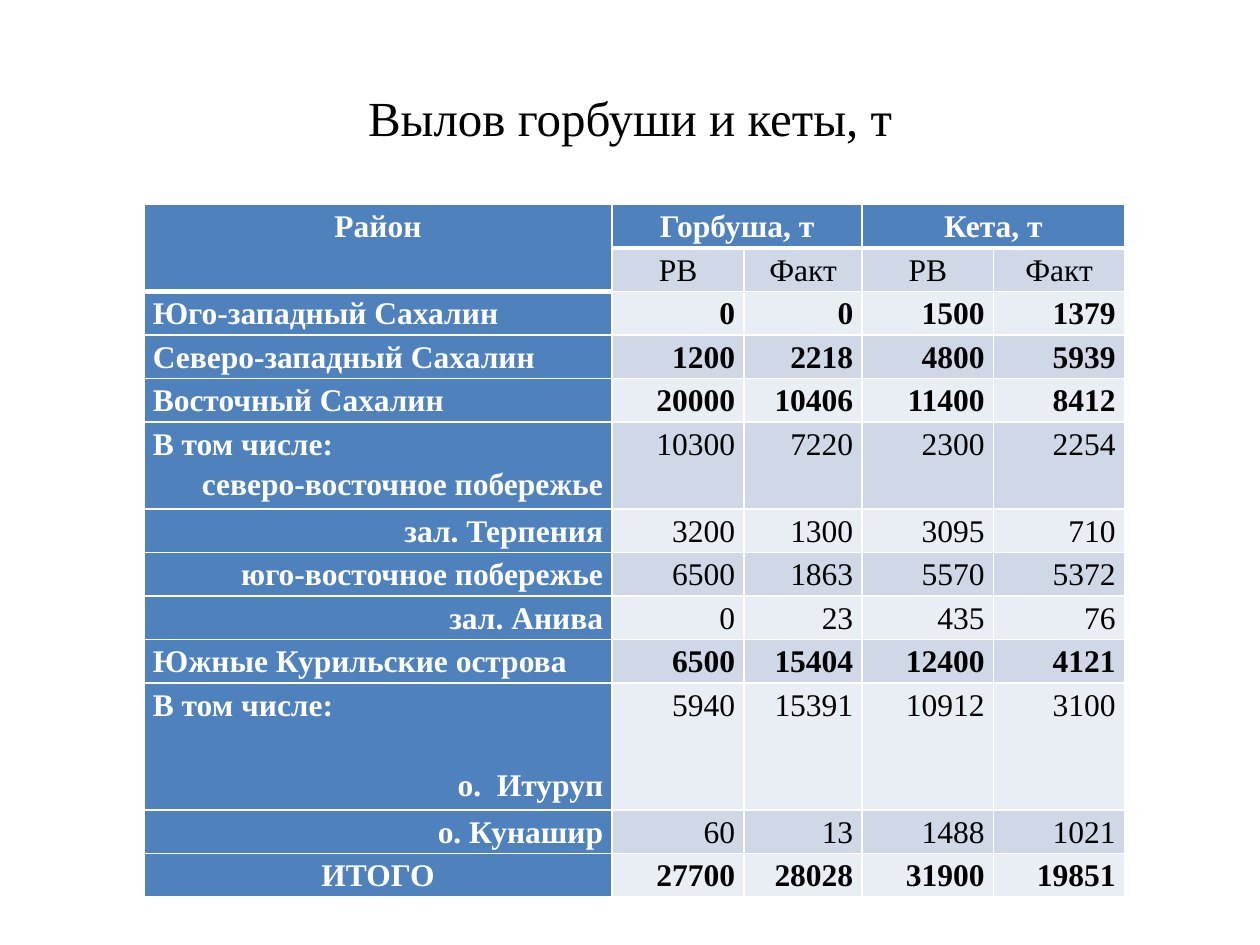
from lxml.etree import SubElement
from pptx import Presentation
from pptx.dml.color import RGBColor
from pptx.enum.text import MSO_ANCHOR, PP_ALIGN as Align
from pptx.oxml.ns import qn
from pptx.util import Cm, Pt

# Content: (region lines with alignment, catch figures, bold figures)
TITLE = "Вылов горбуши и кеты, т"
SPECIES = ["Горбуша, т", "Кета, т"]
MEASURES = ["РВ", "Факт"]
L, C, R = Align.LEFT, Align.CENTER, Align.RIGHT
INCLUDING = ("В том числе:", L)
REGIONS = [
    ([("Юго-западный Сахалин", L)], [0, 0, 1500, 1379], True),
    ([("Северо-западный Сахалин", L)], [1200, 2218, 4800, 5939], True),
    ([("Восточный Сахалин", L)], [20000, 10406, 11400, 8412], True),
    ([INCLUDING, ("северо-восточное побережье", R)], [10300, 7220, 2300, 2254], False),
    ([("зал. Терпения", R)], [3200, 1300, 3095, 710], False),
    ([("юго-восточное побережье", R)], [6500, 1863, 5570, 5372], False),
    ([("зал. Анива", R)], [0, 23, 435, 76], False),
    ([("Южные Курильские острова", L)], [6500, 15404, 12400, 4121], True),
    ([INCLUDING, ("о.  Итуруп", R)], [5940, 15391, 10912, 3100], False),
    ([("о. Кунашир", R)], [60, 13, 1488, 1021], False),
    ([("ИТОГО", C)], [27700, 28028, 31900, 19851], True),
]
COLORS = {"head": "4F81BD", "odd": "D0D8E8", "even": "E9EDF4",
          "light": "FFFFFF", "dark": "000000"}
FONT = "Times New Roman"
COLUMN_WIDTHS = [9.44, 2.66, 2.38, 2.65, 2.64]
ROW_HEIGHT = 0.84
TALL_ROWS = {5: 1.73, 10: 2.42}
ITURUP_ROW, ITURUP_GAP = 10, Pt(23)


def write(paragraph, text, size, color, bold, align):
    paragraph.text = text
    paragraph.alignment = align
    font = paragraph.font
    font.name, font.size, font.bold = FONT, Pt(size), bold
    font.color.rgb = RGBColor.from_string(COLORS[color])


def draw_borders(cell, top, bottom):
    props = cell._tc.get_or_add_tcPr()
    for side, width in (("L", 1), ("R", 1), ("T", top), ("B", bottom)):
        line = SubElement(props, qn(f"a:ln{side}"), w=str(Pt(width)))
        fill = SubElement(line, qn("a:solidFill"))
        SubElement(fill, qn("a:srgbClr"), val=COLORS["light"])


def fill_cell(cell, lines, color, bold):
    frame = cell.text_frame
    for i, (text, align) in enumerate(lines):
        paragraph = frame.add_paragraph() if i else frame.paragraphs[0]
        write(paragraph, text, 18, color, bold, align)
        paragraph.line_spacing = 1.15


def main():
    prs = Presentation()
    prs.slide_width, prs.slide_height = Cm(25.4), Cm(19.05)
    slide = prs.slides.add_slide(prs.slide_layouts[6])

    # Title
    title = slide.shapes.add_textbox(Cm(1.27), Cm(0.76), Cm(22.86), Cm(3.18)).text_frame
    title.word_wrap = True
    title.vertical_anchor = MSO_ANCHOR.MIDDLE
    write(title.paragraphs[0], TITLE, 28, "dark", False, C)

    # Table grid
    heights = [TALL_ROWS.get(r, ROW_HEIGHT) for r in range(len(REGIONS) + 2)]
    table = slide.shapes.add_table(
        len(heights), len(COLUMN_WIDTHS), Cm(2.9), Cm(4.12),
        Cm(sum(COLUMN_WIDTHS)), Cm(sum(heights))).table
    for column, width in zip(table.columns, COLUMN_WIDTHS):
        column.width = Cm(width)
    for row, height in zip(table.rows, heights):
        row.height = Cm(height)

    # Cell margins, borders and fills
    header_edge = {(0, c) for c in range(len(COLUMN_WIDTHS))} | {(1, 0)}
    for r in range(len(heights)):
        for c in range(len(COLUMN_WIDTHS)):
            cell = table.cell(r, c)
            cell.margin_left = cell.margin_right = Cm(0.18)
            cell.margin_top = cell.margin_bottom = 0
            draw_borders(cell, 3 if (r - 1, c) in header_edge else 1,
                         3 if (r, c) in header_edge else 1)
            shade = "head" if r == 0 or c == 0 else "odd" if r % 2 else "even"
            cell.fill.solid()
            cell.fill.fore_color.rgb = RGBColor.from_string(COLORS[shade])

    # Headings
    table.cell(0, 0).merge(table.cell(1, 0))
    fill_cell(table.cell(0, 0), [("Район", C)], "light", True)
    for s, species in enumerate(SPECIES):
        first = 1 + s * len(MEASURES)
        table.cell(0, first).merge(table.cell(0, first + len(MEASURES) - 1))
        fill_cell(table.cell(0, first), [(species, C)], "light", True)
        for m, measure in enumerate(MEASURES):
            fill_cell(table.cell(1, first + m), [(measure, C)], "dark", False)

    # Regions and catch
    for r, (region, catch, bold) in enumerate(REGIONS, start=2):
        fill_cell(table.cell(r, 0), region, "light", True)
        for c, tonnes in enumerate(catch, start=1):
            fill_cell(table.cell(r, c), [(str(tonnes), R)], "dark", bold)
    table.cell(ITURUP_ROW, 0).text_frame.paragraphs[1].space_before = ITURUP_GAP

    prs.save("out.pptx")


if __name__ == "__main__":
    main()
